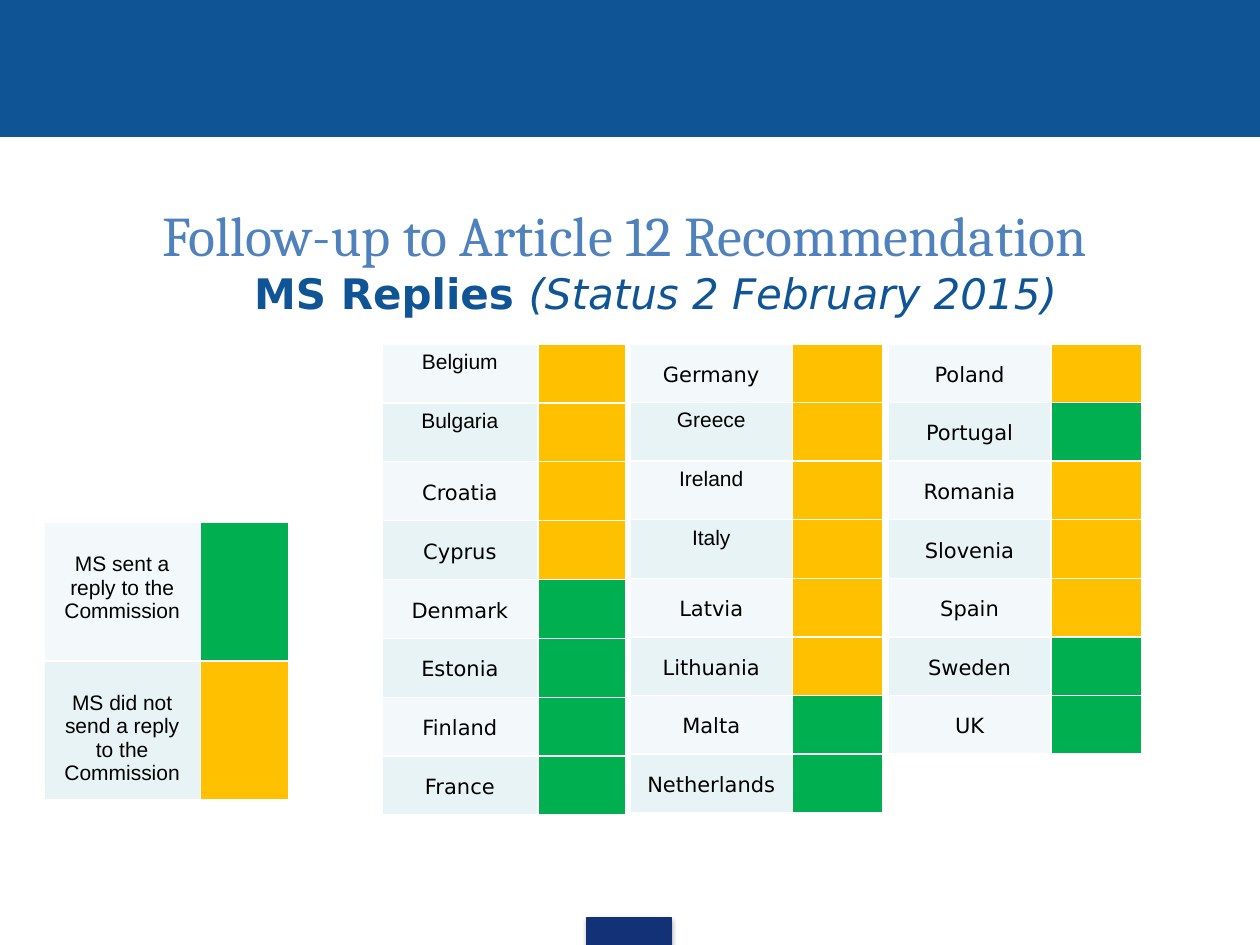
"""Build the slide showing Member State replies to the Article 12 Recommendation."""
from lxml import etree
from pptx import Presentation
from pptx.dml.color import RGBColor
from pptx.enum import shapes, text
from pptx.oxml import ns
from pptx.util import Pt

BLUE = RGBColor(0x0F, 0x54, 0x94)
NAVY = RGBColor(0x13, 0x31, 0x76)
TITLE_BLUE = RGBColor(0x4F, 0x81, 0xBD)
BLACK = RGBColor(0, 0, 0)
GREEN = RGBColor(0x00, 0xB0, 0x50)
AMBER = RGBColor(0xFF, 0xC0, 0x00)
BANDS = RGBColor(0xF3, 0xF9, 0xFA), RGBColor(0xE7, 0xF3, 0xF4)

REPLIED = {"Denmark", "Estonia", "Finland", "France", "Malta",
           "Netherlands", "Portugal", "Sweden", "UK"}
TOP_ALIGNED = {"Belgium", "Bulgaria", "Greece", "Ireland", "Italy"}
COUNTRY_TABLES = [
    (218.16, 89.28, 50.4, 33.66, ["Belgium", "Bulgaria", "Croatia", "Cyprus",
                                  "Denmark", "Estonia", "Finland", "France"]),
    (360, 92.88, 51.84, 33.48, ["Germany", "Greece", "Ireland", "Italy",
                                "Latvia", "Lithuania", "Malta", "Netherlands"]),
    (507.6, 92.88, 51.84, 33.5, ["Poland", "Portugal", "Romania", "Slovenia",
                                 "Spain", "Sweden", "UK"]),
]
COUNTRY_TOP = 196.56
LEGEND = [("MS sent a reply to the Commission", GREEN),
          ("MS did not send a reply to the Commission", AMBER)]
TITLE_RUNS = [("MS Replies ", True, False), ("(Status 2 February 2015)", False, True)]


def add_bar(slide, left, top, width, height, color):
    bar = slide.shapes.add_shape(shapes.MSO_SHAPE.RECTANGLE,
                                 Pt(left), Pt(top), Pt(width), Pt(height))
    bar.shadow.inherit = False
    bar.fill.solid()
    bar.fill.fore_color.rgb = color
    bar.line.color.rgb = color
    bar.line.width = Pt(0.75)
    return bar


def add_shadow(shape):
    effects = shape._element.spPr.find(ns.qn("a:effectLst"))
    shadow = etree.SubElement(effects, ns.qn("a:outerShdw"), blurRad=str(Pt(3.1)),
                              dist=str(Pt(1.8)), dir="5400000", rotWithShape="0")
    color = etree.SubElement(shadow, ns.qn("a:srgbClr"), val="000000")
    etree.SubElement(color, ns.qn("a:alpha"), val="35000")


def add_title(slide):
    box = slide.shapes.add_textbox(Pt(36.72), Pt(111.6), Pt(648), Pt(73.44))
    frame = box.text_frame
    frame.word_wrap = True
    frame.vertical_anchor = text.MSO_ANCHOR.MIDDLE
    paragraph = frame.paragraphs[0]
    paragraph.alignment = text.PP_ALIGN.CENTER
    properties = paragraph._p.get_or_add_pPr()
    properties.set("marL", str(Pt(28)))
    properties.set("indent", str(Pt(-28)))
    heading = paragraph.add_run()
    heading.text = "Follow-up to Article 12 Recommendation "
    heading.font.name = "Cambria"
    heading.font.size = Pt(32)
    heading.font.color.rgb = TITLE_BLUE
    paragraph.add_line_break()
    for words, bold, italic in TITLE_RUNS:
        run = paragraph.add_run()
        run.text = words
        run.font.name = "DejaVu Sans"
        run.font.size = Pt(24)
        run.font.bold = bold
        run.font.italic = italic
        run.font.color.rgb = BLUE


def style_cell(cell, color):
    properties = cell._tc.get_or_add_tcPr()
    for side in ("lnL", "lnR", "lnT", "lnB"):
        border = etree.SubElement(properties, ns.qn(f"a:{side}"), w=str(Pt(1)))
        fill = etree.SubElement(border, ns.qn("a:solidFill"))
        etree.SubElement(fill, ns.qn("a:srgbClr"), val="FFFFFF")
    cell.fill.solid()
    cell.fill.fore_color.rgb = color


def write_label(cell, label, centred, top_margin):
    cell.text = label
    paragraph = cell.text_frame.paragraphs[0]
    paragraph.alignment = text.PP_ALIGN.CENTER
    paragraph.font.size = Pt(12)
    paragraph.font.color.rgb = BLACK
    paragraph.font.name = "DejaVu Sans" if centred else "Arial"
    if centred:
        cell.vertical_anchor = text.MSO_ANCHOR.MIDDLE
        cell.margin_left = cell.margin_right = cell.margin_top = cell.margin_bottom = 0
        paragraph.line_spacing = 1.15
        paragraph.space_after = Pt(10)
    else:
        cell.margin_top = Pt(top_margin)


def add_status_table(slide, left, top, widths, row_height, rows, top_margin=3.6):
    frame = slide.shapes.add_table(len(rows), 2, Pt(left), Pt(top),
                                   Pt(sum(widths)), Pt(row_height * len(rows)))
    table = frame.table
    table.first_row = table.horz_banding = False
    for column, width in zip(table.columns, widths):
        column.width = Pt(width)
    for index, (label, status, centred) in enumerate(rows):
        table.rows[index].height = Pt(row_height)
        style_cell(table.cell(index, 0), BANDS[index % 2])
        style_cell(table.cell(index, 1), status)
        write_label(table.cell(index, 0), label, centred, top_margin)


def main():
    presentation = Presentation()
    presentation.slide_width, presentation.slide_height = Pt(720), Pt(540)
    slide = presentation.slides.add_slide(presentation.slide_layouts[6])
    add_bar(slide, 0, 0, 720, 77.76, BLUE)
    add_shadow(add_bar(slide, 335.52, 524.16, 48.24, 15.84, NAVY))
    add_title(slide)
    for left, label_width, status_width, row_height, countries in COUNTRY_TABLES:
        rows = [(country, GREEN if country in REPLIED else AMBER,
                 country not in TOP_ALIGNED) for country in countries]
        add_status_table(slide, left, COUNTRY_TOP, (label_width, status_width),
                         row_height, rows)
    legend_rows = [(label, status, False) for label, status in LEGEND]
    add_status_table(slide, 25.2, 298.44, (89.28, 50.4), 79.2, legend_rows, 17.4)
    presentation.save("out.pptx")


if __name__ == "__main__":
    main()
